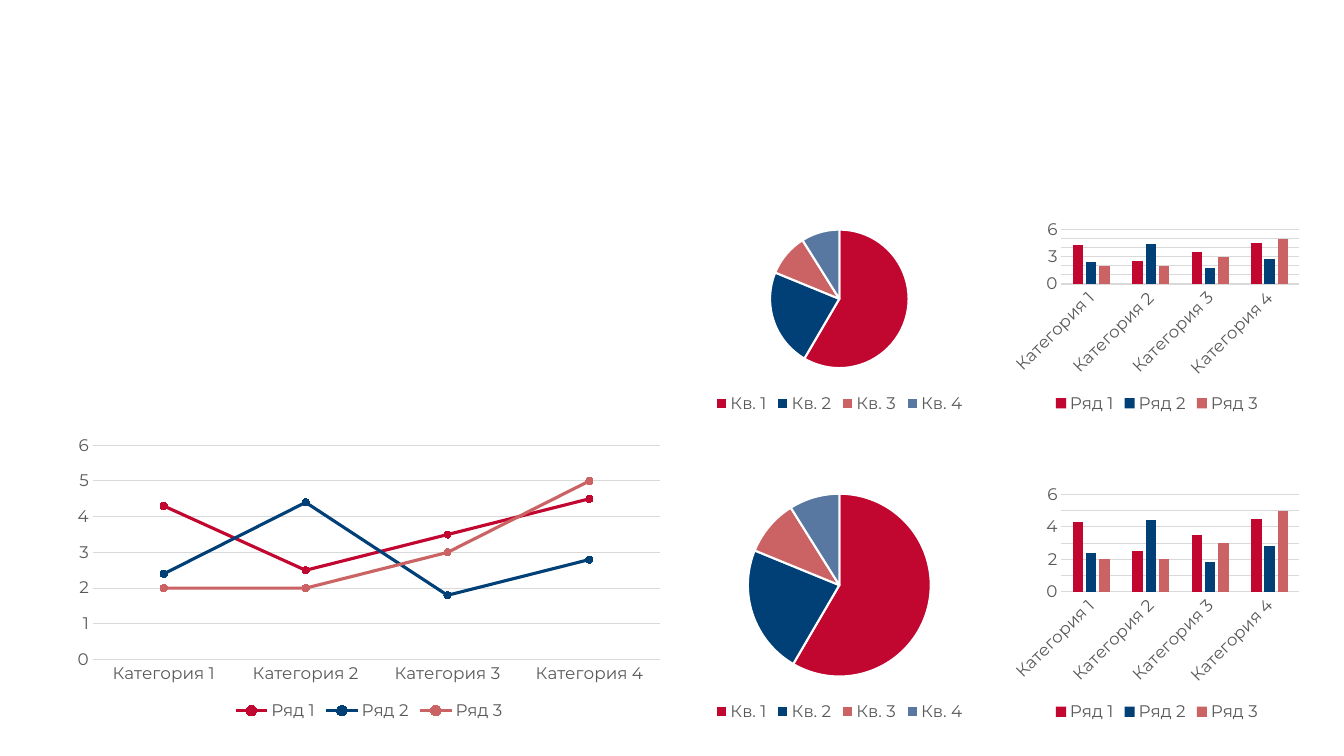
from dataclasses import dataclass

from pptx import Presentation
from pptx.chart.chart import Chart
from pptx.chart.data import CategoryChartData
from pptx.dml.color import RGBColor
from pptx.dml.line import LineFormat
from pptx.enum.chart import XL_CHART_TYPE, XL_LEGEND_POSITION, XL_MARKER_STYLE, XL_TICK_MARK
from pptx.util import Inches, Pt

SLIDE_WIDTH, SLIDE_HEIGHT = Inches(13.33), Inches(7.5)
FONT = "Montserrat"
TEXT_GREY, RULE_GREY, WHITE = "595959", "D9D9D9", "FFFFFF"
PALETTE = ["C10630", "004077", "CB6365", "5878A2"]

CATEGORIES = [f"Категория {number}" for number in range(1, 5)]
ROWS = {
    "Ряд 1": [4.3, 2.5, 3.5, 4.5],
    "Ряд 2": [2.4, 4.4, 1.8, 2.8],
    "Ряд 3": [2, 2, 3, 5],
}
QUARTERS = [f"Кв. {number}" for number in range(1, 5)]
QUARTER_SHARES = {"Series 1": [59, 23, 10, 9]}


@dataclass(frozen=True)
class Span:
    """A stretch of the slide, in percent of its width or height."""

    start: float
    size: float


@dataclass(frozen=True)
class Panel:
    """One chart and its cell on the slide."""

    kind: XL_CHART_TYPE
    column: Span
    row: Span


WIDE, MIDDLE, RIGHT = Span(4.88, 45.16), Span(51.31, 22.28), Span(74.94, 22.28)
UPPER, LOWER, TALL = Span(28.53, 26.67), Span(63.47, 32.53), Span(56.8, 39.07)

PANELS = [
    Panel(XL_CHART_TYPE.PIE, MIDDLE, UPPER),
    Panel(XL_CHART_TYPE.PIE, MIDDLE, LOWER),
    Panel(XL_CHART_TYPE.COLUMN_CLUSTERED, RIGHT, LOWER),
    Panel(XL_CHART_TYPE.COLUMN_CLUSTERED, RIGHT, UPPER),
    Panel(XL_CHART_TYPE.LINE_MARKERS, WIDE, TALL),
]


def rgb(code: str) -> RGBColor:
    """Turn a hex string into a colour."""
    return RGBColor.from_string(code)


def fill_solid(fill, code: str) -> None:
    """Fill with one colour."""
    fill.solid()
    fill.fore_color.rgb = rgb(code)


def style_line(line: LineFormat, code: str, width: float) -> None:
    """Set the colour and width of a line."""
    fill_solid(line.fill, code)
    line.width = Pt(width)


def style_font(font, size: float, code: str) -> None:
    """Set typeface, size and colour."""
    font.name, font.size = FONT, Pt(size)
    font.color.rgb = rgb(code)


def style_axes(chart: Chart) -> None:
    """Draw the grid and the category line in light grey, without ticks."""
    for axis in (chart.category_axis, chart.value_axis):
        axis.major_tick_mark = axis.minor_tick_mark = XL_TICK_MARK.NONE
        style_font(axis.tick_labels.font, 12, TEXT_GREY)
    style_line(chart.category_axis.format.line, RULE_GREY, 0.75)
    chart.value_axis.format.line.fill.background()
    chart.value_axis.has_major_gridlines = True
    style_line(chart.value_axis.major_gridlines.format.line, RULE_GREY, 0.75)


def style_pie(chart: Chart) -> None:
    """Colour each slice and part the slices in white."""
    chart.plots[0].vary_by_categories = True
    slices = chart.plots[0].series[0].points
    for index, color in enumerate(PALETTE):
        fill_solid(slices[index].format.fill, color)
        style_line(slices[index].format.line, WHITE, 1.5)


def style_columns(chart: Chart) -> None:
    """Colour and space the columns."""
    plot = chart.plots[0]
    plot.vary_by_categories = False
    plot.gap_width, plot.overlap = 219, -27
    for series, color in zip(plot.series, PALETTE):
        fill_solid(series.format.fill, color)
    style_axes(chart)


def style_curves(chart: Chart) -> None:
    """Colour the straight lines and their round markers."""
    plot = chart.plots[0]
    plot.vary_by_categories = False
    for series, color in zip(plot.series, PALETTE):
        series.smooth = False
        style_line(series.format.line, color, 2.25)
        series.marker.style, series.marker.size = XL_MARKER_STYLE.CIRCLE, 5
        fill_solid(series.marker.format.fill, color)
        style_line(series.marker.format.line, color, 0.75)
    style_axes(chart)


STYLES = {
    XL_CHART_TYPE.PIE: style_pie,
    XL_CHART_TYPE.COLUMN_CLUSTERED: style_columns,
    XL_CHART_TYPE.LINE_MARKERS: style_curves,
}


def draw_panel(slide, panel: Panel) -> None:
    """Add the chart of one panel."""
    is_pie = panel.kind == XL_CHART_TYPE.PIE
    data = CategoryChartData()
    data.categories = QUARTERS if is_pie else CATEGORIES
    for name, values in (QUARTER_SHARES if is_pie else ROWS).items():
        data.add_series(name, values)
    left, width = (int(SLIDE_WIDTH * part / 100) for part in (panel.column.start, panel.column.size))
    top, height = (int(SLIDE_HEIGHT * part / 100) for part in (panel.row.start, panel.row.size))
    chart = slide.shapes.add_chart(panel.kind, left, top, width, height, data).chart
    chart.has_title = False
    style_font(chart.font, 10, "000000")
    chart.has_legend = True
    chart.legend.position = XL_LEGEND_POSITION.BOTTOM
    chart.legend.include_in_layout = False
    style_font(chart.legend.font, 12, TEXT_GREY)
    STYLES[panel.kind](chart)


def main() -> None:
    """Build the slide and save it."""
    presentation = Presentation()
    presentation.slide_width, presentation.slide_height = SLIDE_WIDTH, SLIDE_HEIGHT
    slide = presentation.slides.add_slide(presentation.slide_layouts[6])
    for panel in PANELS:
        draw_panel(slide, panel)
    presentation.save("out.pptx")


if __name__ == "__main__":
    main()
